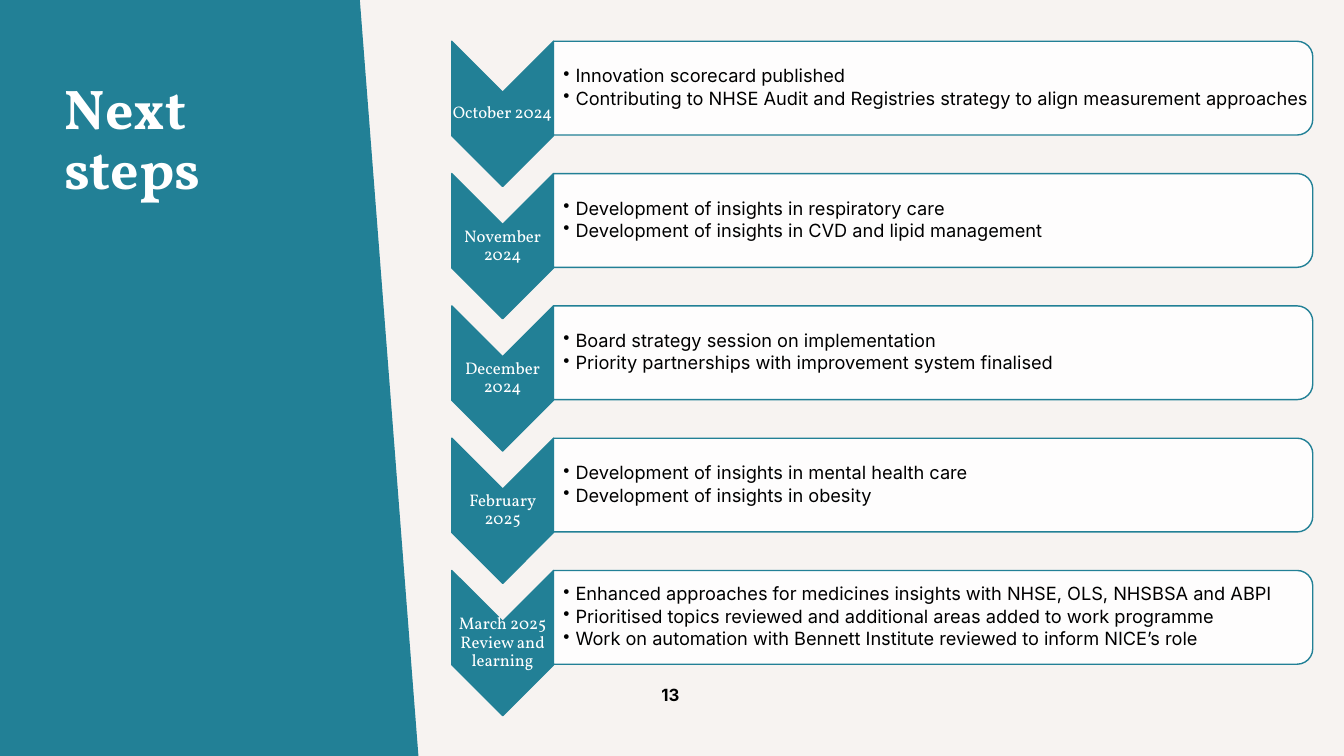
from lxml.etree import SubElement
from pptx import Presentation
from pptx.dml.color import RGBColor
from pptx.enum.shapes import MSO_SHAPE as Preset
from pptx.enum.text import MSO_ANCHOR as Anchor, MSO_AUTO_SIZE as AutoSize, PP_ALIGN as Align
from pptx.oxml.ns import qn
from pptx.util import Inches, Pt

WIDTH, HEIGHT = 13.33, 7.5
TEAL, CREAM, WHITE, BLACK = "228096", "F7F3F1", "FFFFFF", "000000"

# Timeline grid: a chevron column and a card column, five equal rows
TIMELINE_BOX = (4.48, 0.41, 8.54, 5.25 + 0.93)
CHEVRON_WIDTH, CHEVRON_HEIGHT, CARD_HEIGHT = 1.01, 1.44, 0.93
LABEL_OFFSET, LABEL_HEIGHT = 0.5, 0.43
CARD_MARGIN = 0.04

TITLE_FONT = dict(name="Vollkorn", size=Pt(40), bold=True)
LABEL_FONT = dict(name="Vollkorn", size=Pt(12), bold=False)
CARD_FONT = dict(name="Inter", size=Pt(13), bold=False)
NUMBER_FONT = dict(name="Inter", size=Pt(12), bold=True)

STEPS = [
    ("October 2024", [
        "Innovation scorecard published",
        "Contributing to NHSE Audit and Registries strategy to align measurement approaches"]),
    ("November 2024", [
        "Development of insights in respiratory care",
        "Development of insights in CVD and lipid management"]),
    ("December 2024", [
        "Board strategy session on implementation",
        "Priority partnerships with improvement system finalised"]),
    ("February 2025", [
        "Development of insights in mental health care",
        "Development of insights in obesity"]),
    ("March 2025 Review and learning", [
        "Enhanced approaches for medicines insights with NHSE, OLS, NHSBSA and ABPI",
        "Prioritised topics reviewed and additional areas added to work programme",
        "Work on automation with Bennett Institute reviewed to inform NICE’s role"]),
]


def paint(color_format, color):
    color_format.rgb = RGBColor.from_string(color)


def style_shape(shape, fill, line):
    shape.shadow.inherit = False
    shape.fill.solid()
    paint(shape.fill.fore_color, fill)
    paint(shape.line.color, line)
    shape.line.width = Pt(1)


def set_frame(frame, anchor, margins):
    left, top, right, bottom = (Inches(margin) for margin in margins)
    settings = dict(word_wrap=True, auto_size=AutoSize.NONE, vertical_anchor=anchor,
                    margin_left=left, margin_top=top, margin_right=right, margin_bottom=bottom)
    for name, value in settings.items():
        setattr(frame, name, value)


def add_bullet(para):
    properties = para._p.get_or_add_pPr()
    properties.set("marL", str(Inches(0.12)))
    properties.set("indent", str(-Inches(0.12)))
    SubElement(properties, qn("a:buChar")).set("char", "•")


def write(frame, lines, font, color, align=Align.LEFT, spacing=0.9, after=0, bullets=False):
    for index, line in enumerate(lines):
        para = frame.paragraphs[0] if index == 0 else frame.add_paragraph()
        para.alignment, para.line_spacing = align, spacing
        para.space_before, para.space_after = Pt(0), Pt(after)
        if bullets:
            add_bullet(para)
        span = para.add_run()
        span.text = line
        for name, value in font.items():
            setattr(span.font, name, value)
        paint(span.font.color, color)


def add_text(shapes, box, lines, font, color, anchor, margins, **layout):
    frame = shapes.add_textbox(*map(Inches, box)).text_frame
    set_frame(frame, anchor, margins)
    write(frame, lines, font, color, **layout)


def add_turned(shapes, preset, box):
    """Add a preset turned clockwise so that it fills the given box."""
    left, top, width, height = box
    shift = (width - height) / 2
    shape = shapes.add_shape(preset, *map(Inches, (left + shift, top - shift, height, width)))
    shape.rotation = 90
    return shape


def add_title_panel(page, box):
    left, top, width, height = box
    # Slanted panel
    builder = page.shapes.build_freeform(Inches(left), Inches(top))
    corners = [(left + width * 0.86, top), (left + width, top + height), (left, top + height)]
    builder.add_line_segments([(Inches(x), Inches(y)) for x, y in corners], close=True)
    panel = builder.convert_to_shape()
    style_shape(panel, TEAL, TEAL)
    panel.line.fill.background()

    # Title, brought in front of the panel
    title = page.shapes.title
    title.left, title.top = Inches(left + width * 0.13), Inches(top + height * 0.1)
    title.width, title.height = Inches(width * 0.64), Inches(height * 0.61)
    set_frame(title.text_frame, Anchor.TOP, (0.1, 0.05, 0.1, 0.05))
    write(title.text_frame, ["Next steps"], TITLE_FONT, WHITE)
    title.element.getparent().append(title.element)


def add_step(shapes, left, top, width, label, points):
    # Chevron with its date
    chevron = add_turned(shapes, Preset.CHEVRON, (left, top, CHEVRON_WIDTH, CHEVRON_HEIGHT))
    style_shape(chevron, TEAL, TEAL)
    add_text(shapes, (left, top + LABEL_OFFSET, CHEVRON_WIDTH, LABEL_HEIGHT), [label],
             LABEL_FONT, WHITE, Anchor.MIDDLE, [0.01] * 4, align=Align.CENTER)

    # Translucent card with its bullets
    card_left, card_width = left + CHEVRON_WIDTH, width - CHEVRON_WIDTH
    card = add_turned(shapes, Preset.ROUND_2_SAME_RECTANGLE,
                      (card_left, top, card_width, CARD_HEIGHT))
    style_shape(card, WHITE, TEAL)
    fill_color = card.element.spPr.find(qn("a:solidFill"))[0]
    SubElement(fill_color, qn("a:alpha")).set("val", "90000")
    add_text(shapes, (card_left, top + CARD_MARGIN, card_width - CARD_MARGIN,
                      CARD_HEIGHT - 2 * CARD_MARGIN),
             points, CARD_FONT, BLACK, Anchor.MIDDLE, (0.1, 0.01, 0.01, 0.01),
             after=2, bullets=True)


def add_timeline(page, box):
    left, top, width, height = box
    pitch = (height - CARD_HEIGHT) / (len(STEPS) - 1)
    shapes = page.shapes.add_group_shape().shapes
    for row, (label, points) in enumerate(STEPS):
        add_step(shapes, left, top + row * pitch, width, label, points)


def add_page_number(page, box):
    add_text(page.shapes, box, ["13"], NUMBER_FONT, BLACK, Anchor.TOP,
             (0.1, 0.05, 0.1, 0.05), align=Align.CENTER, spacing=1.0)


def main():
    deck = Presentation()
    deck.slide_width, deck.slide_height = Inches(WIDTH), Inches(HEIGHT)
    page = deck.slides.add_slide(deck.slide_layouts.get_by_name("Title Only"))
    page.background.fill.solid()
    paint(page.background.fill.fore_color, CREAM)
    add_title_panel(page, (0, 0, 4.15, HEIGHT))
    add_page_number(page, (5.15, 6.74, 3, 0.4))
    add_timeline(page, TIMELINE_BOX)
    deck.save("out.pptx")


if __name__ == "__main__":
    main()
